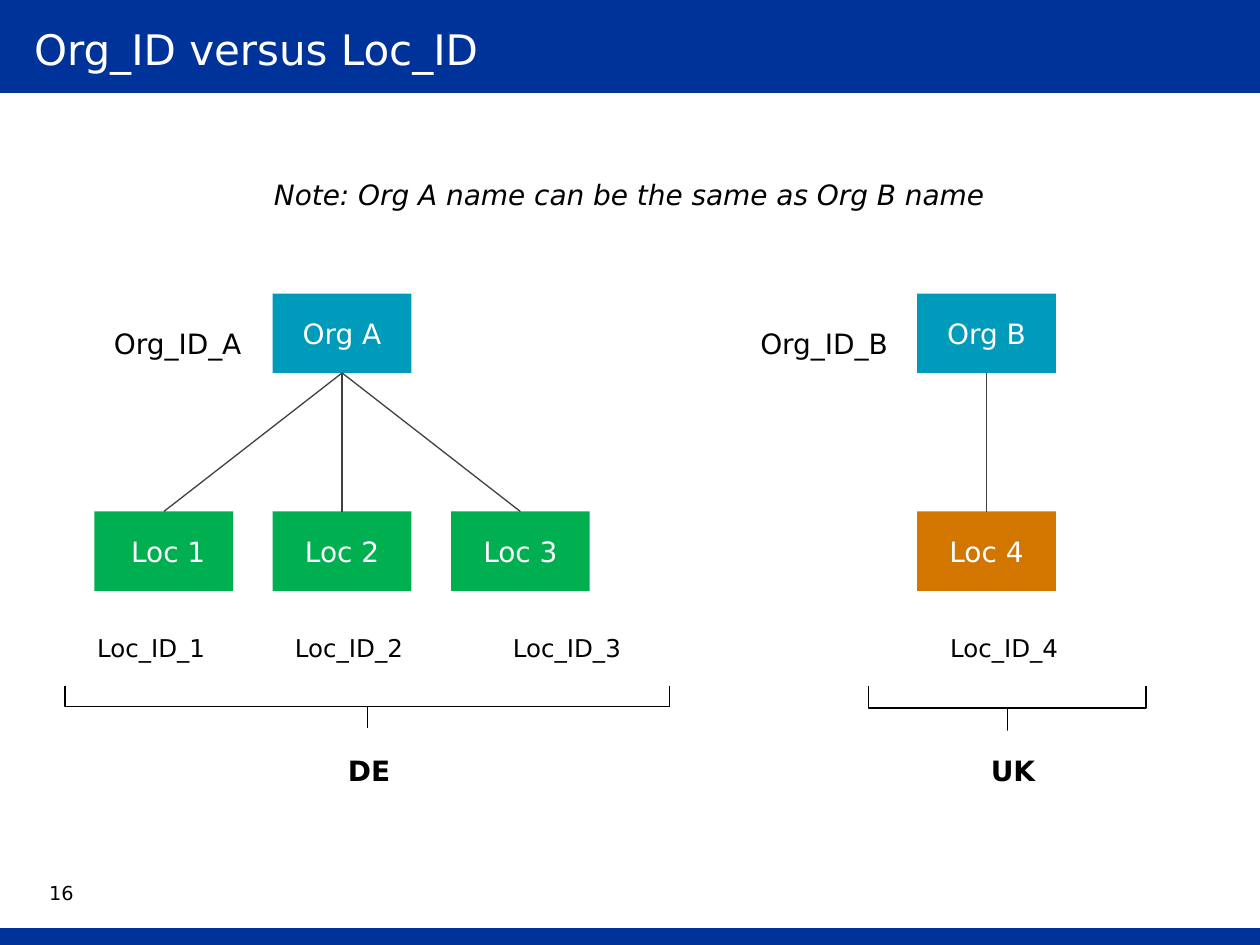
from pptx import Presentation
from pptx.dml.color import RGBColor
from pptx.enum.shapes import MSO_CONNECTOR as Link, MSO_SHAPE as Shape
from pptx.enum.text import MSO_ANCHOR as Anchor, PP_ALIGN as Align
from pptx.oxml.ns import qn
from pptx.util import Inches, Pt

INK = {
    "navy": "003399", "white": "FFFFFF", "black": "000000",
    "teal": "009BBB", "green": "00B050", "amber": "D37600", "grey": "404040",
}
FONT = "DejaVu Sans"
COLS, ROWS = 100, 75


class Board:
    """Holds the style and the slide; lengths are cells of a 100 by 75 grid."""

    def __init__(self, deck):
        self.slide = deck.slides.add_slide(deck.slide_layouts[5])
        self.shapes = self.slide.shapes
        self.col = deck.slide_width / COLS
        self.row = deck.slide_height / ROWS

    def spot(self, x, y, w, h):
        return (round(x * self.col), round(y * self.row),
                round(w * self.col), round(h * self.row))

    def ink(self, name):
        return RGBColor.from_string(INK[name])

    def set_text(self, frame, text, size, ink, align=Align.CENTER, space=None):
        frame.text = text
        par = frame.paragraphs[0]
        par.alignment = align
        par.line_spacing = space
        font = par.font
        font.name, font.size = FONT, Pt(size)
        font.color.rgb = self.ink(ink)
        return font

    def bare(self, frame):
        frame.margin_left = frame.margin_right = 0
        frame.margin_top = frame.margin_bottom = 0

    def title(self, text, *cell):
        """Fills the title placeholder and brings it in front of the bars."""
        head = self.shapes.title
        head.left, head.top, head.width, head.height = self.spot(*cell)
        frame = head.text_frame
        self.bare(frame)
        frame.vertical_anchor = Anchor.MIDDLE
        self.set_text(frame, text, 24, "white", Align.LEFT, Pt(31.7))
        head.element.getparent().append(head.element)

    def number(self, text, *cell):
        frame = self.shapes.add_textbox(*self.spot(*cell)).text_frame
        self.bare(frame)
        frame.word_wrap = True
        self.set_text(frame, text, 11, "black", Align.LEFT, Pt(12))

    def label(self, text, *cell, size=16, bold=None, italic=None):
        frame = self.shapes.add_textbox(*self.spot(*cell)).text_frame
        frame.word_wrap = False
        font = self.set_text(frame, text, size, "black", space=1.2)
        font.bold, font.italic = bold, italic

    def rect(self, fill, *cell):
        box = self.shapes.add_shape(Shape.RECTANGLE, *self.spot(*cell))
        box.shadow.inherit = False
        box.fill.solid()
        box.fill.fore_color.rgb = self.ink(fill)
        box.line.fill.background()
        return box

    def node(self, text, fill, x, y, pad=0):
        box = self.rect(fill, x, y, 11, 6.3)
        frame = box.text_frame
        frame.margin_left = Inches(0.1 + pad)
        frame.vertical_anchor = Anchor.MIDDLE
        self.set_text(frame, text, 16, "white")
        return box

    def line(self, ink, width, x1=0, y1=0, x2=0, y2=0):
        ends = self.spot(x1, y1, x2, y2)
        rule = self.shapes.add_connector(Link.STRAIGHT, *ends)
        rule.line.color.rgb = self.ink(ink)
        rule.line.width = Pt(width)
        props = rule.element.spPr
        props.append(props.makeelement(qn("a:effectLst"), {}))
        return rule

    def link(self, top, low):
        rule = self.line("grey", 0.75)
        rule.begin_connect(top, 2)
        rule.end_connect(low, 0)

    def brace(self, x, y, w, h):
        """Draws a square brace that points down and fills the given cell."""
        cell = self.spot(x + (w - h) / 2, y + (h - w) / 2, h, w)
        mark = self.shapes.add_shape(Shape.RIGHT_BRACE, *cell)
        mark.rotation = 90
        mark.adjustments[0], mark.adjustments[1] = 0, 0.5
        mark.shadow.inherit = False
        mark.fill.background()
        mark.line.color.rgb = self.ink("black")
        mark.line.width = Pt(0.75)


def main():
    deck = Presentation()
    deck.slide_width, deck.slide_height = Inches(10), Inches(7.5)
    board = Board(deck)

    board.rect("navy", 0, 73.6, COLS, 1.4)
    board.rect("navy", 0, 0, COLS, 7.4)
    for y in (7.4, 73.6):
        board.line("white", 0.25, 0, y, COLS, y)
    board.title("Org_ID versus Loc_ID", 2.7, 0.1, 70.9, 7.1)
    board.number("16", 3.9, 70.1, 3.4, 2.6)
    board.label("Note: Org A name can be the same as Org B name",
                2.7, 13.1, 94.5, 4.2, italic=True)

    left, step, right = 7.5, 14.15, 72.8
    orgs = {}
    for key, x, tag in (("A", left + step, 7.5), ("B", right, 58.8)):
        orgs[key] = board.node(f"Org {key}", "teal", x, 23.3)
        board.label(f"Org_ID_{key}", tag, 24.9, 13.2, 3.9)

    locs = (
        ("A", "green", left, 6.3, 0.07),
        ("A", "green", left + step, 22, 0),
        ("A", "green", left + 2 * step, 39.3, 0),
        ("B", "amber", right, 74, 0),
    )
    for i, (key, fill, x, tag, pad) in enumerate(locs, 1):
        loc = board.node(f"Loc {i}", fill, x, 40.6, pad)
        board.link(orgs[key], loc)
        board.label(f"Loc_ID_{i}", tag, 49.3, 11.4, 3.5, size=14)

    lands = (("DE", 5.15, 48, 3.3, 26.6, 5.4), ("UK", 68.95, 22, 3.5, 77.6, 5.6))
    for name, x, w, h, tag, wide in lands:
        board.brace(x, 54.45, w, h)
        board.label(name, tag, 58.8, wide, 3.9, bold=True)

    deck.save("out.pptx")


if __name__ == "__main__":
    main()
